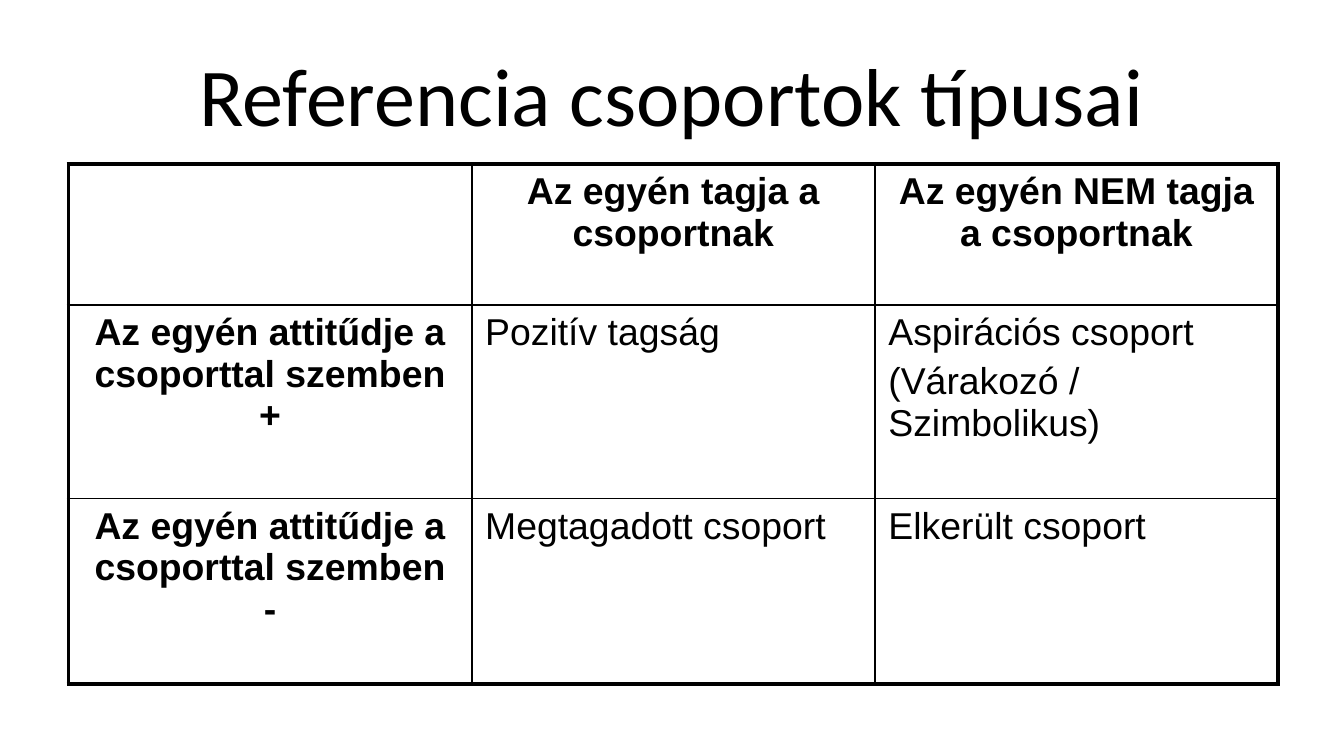
from dataclasses import dataclass

from lxml import etree
from pptx import Presentation
from pptx.dml.color import RGBColor
from pptx.enum.text import MSO_ANCHOR, PP_ALIGN
from pptx.oxml.ns import qn
from pptx.util import Pt

CENTER, LEFT = PP_ALIGN.CENTER, PP_ALIGN.LEFT
MIDDLE, TOP = MSO_ANCHOR.MIDDLE, MSO_ANCHOR.TOP
BLACK = "000000"
THIN, THICK = 1, 2.25
COLUMN_WIDTH = 216
ROW_HEIGHTS = (75.6, 103.7, 99.3)


@dataclass
class Entry:
    text: str
    heading: bool = False


GROUP_TYPES = (
    (Entry(""),
     Entry("Az egyén tagja a csoportnak", True),
     Entry("Az egyén NEM tagja a csoportnak", True)),
    (Entry("Az egyén attitűdje a csoporttal szemben\v+", True),
     Entry("Pozitív tagság"),
     Entry("Aspirációs csoport\n(Várakozó / Szimbolikus)")),
    (Entry("Az egyén attitűdje a csoporttal szemben\v-", True),
     Entry("Megtagadott csoport"),
     Entry("Elkerült csoport")),
)


def color(value: str) -> RGBColor:
    return RGBColor.from_string(value)


def write(frame, text: str, *, font: str, size: float, bold: bool = False,
          align=LEFT, space_before: float = 0) -> None:
    frame.word_wrap = True
    frame.text = text
    for paragraph in frame.paragraphs:
        paragraph.alignment = align
        paragraph.space_before = Pt(space_before)
        paragraph.font.size = Pt(size)
        for run in paragraph.runs:
            run.font.name = font
            run.font.size = Pt(size)
            run.font.bold = bold
            run.font.color.rgb = color(BLACK)


def add_border(cell, side: str, width: float) -> None:
    properties = cell._tc.get_or_add_tcPr()
    line = etree.SubElement(properties, qn(f"a:ln{side}"), w=str(Pt(width)))
    fill = etree.SubElement(line, qn("a:solidFill"))
    etree.SubElement(fill, qn("a:srgbClr"), val=BLACK)


def fill_cell(cell, entry: Entry, outer_sides: dict[str, bool]) -> None:
    cell.margin_left = cell.margin_right = Pt(7.2)
    cell.margin_top = cell.margin_bottom = Pt(3.6)
    cell.vertical_anchor = TOP
    write(cell.text_frame, entry.text, font="Arial", size=20,
          bold=entry.heading, align=CENTER if entry.heading else LEFT,
          space_before=4)
    for side, is_outer in outer_sides.items():
        add_border(cell, side, THICK if is_outer else THIN)
    cell.fill.background()


def add_group_table(slide) -> None:
    rows, columns = len(GROUP_TYPES), len(GROUP_TYPES[0])
    table = slide.shapes.add_table(
        rows, columns, Pt(36.7), Pt(87.8),
        Pt(COLUMN_WIDTH * columns), Pt(sum(ROW_HEIGHTS))).table
    table.first_row = table.horz_banding = False
    for column in table.columns:
        column.width = Pt(COLUMN_WIDTH)
    for r, (height, entries) in enumerate(zip(ROW_HEIGHTS, GROUP_TYPES)):
        table.rows[r].height = Pt(height)
        for c, entry in enumerate(entries):
            fill_cell(table.cell(r, c), entry,
                      {"L": c == 0, "R": c == columns - 1,
                       "T": r == 0, "B": r == rows - 1})


def main() -> None:
    presentation = Presentation()
    presentation.slide_width, presentation.slide_height = Pt(720), Pt(405)
    slide = presentation.slides.add_slide(presentation.slide_layouts[6])

    # Title
    heading = slide.shapes.add_textbox(Pt(36), Pt(16.5), Pt(648), Pt(67)).text_frame
    heading.vertical_anchor = MIDDLE
    write(heading, "Referencia csoportok típusai", font="Calibri", size=44,
          align=CENTER)

    # Membership against attitude
    add_group_table(slide)
    presentation.save("out.pptx")


if __name__ == "__main__":
    main()
